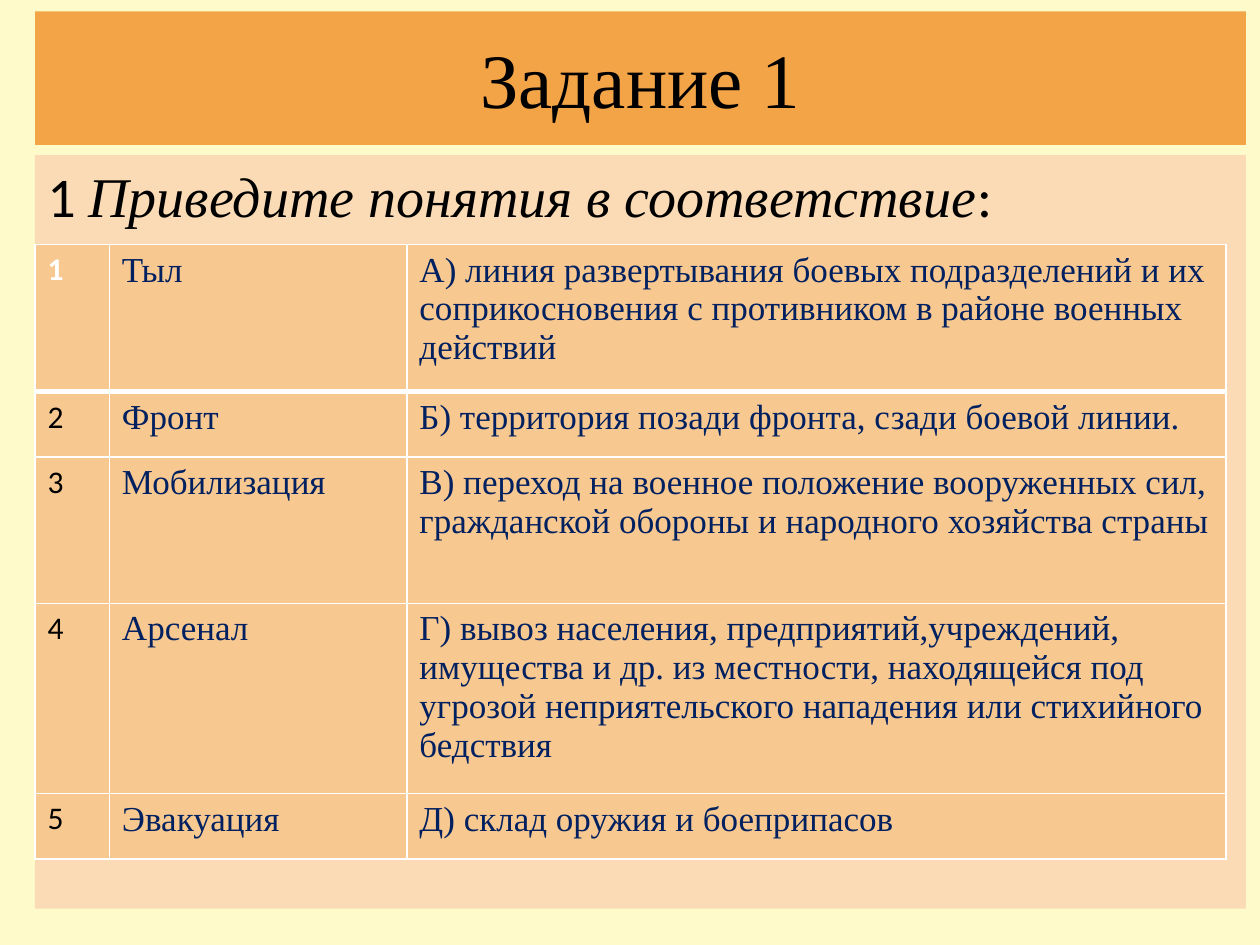
import pptx
import pptx.util
import pptx.dml.color
import pptx.enum.text
import pptx.oxml
import pptx.oxml.ns

Pt = pptx.util.Pt
RGB = pptx.dml.color.RGBColor
ALIGN = pptx.enum.text.PP_ALIGN
ANCHOR = pptx.enum.text.MSO_ANCHOR

CREAM = RGB(0xFE, 0xFA, 0xC9)
ORANGE = RGB(0xF3, 0xA4, 0x47)
PEACH = RGB(0xFA, 0xDB, 0xB5)
SAND = RGB(0xF8, 0xC8, 0x91)
NAVY = RGB(0x00, 0x20, 0x60)
BLACK = RGB(0, 0, 0)
WHITE = RGB(0xFF, 0xFF, 0xFF)
SERIF, SANS = "Times New Roman", "Calibri"

TITLE = "Задание 1"
TASK = [
    ("1 ", {"name": SANS}),
    ("Приведите понятия в соответствие", {"name": SERIF, "italic": True}),
    (":", {"name": SANS}),
]
TERMS = [
    ("Тыл", "А) линия развертывания боевых подразделений и их "
            "соприкосновения с противником в районе военных действий"),
    ("Фронт", "Б) территория позади фронта, сзади боевой линии."),
    ("Мобилизация", "В) переход на военное положение вооруженных сил, "
                    "гражданской обороны и народного хозяйства страны"),
    ("Арсенал", "Г) вывоз населения, предприятий,учреждений, имущества и др. "
                "из местности, находящейся под угрозой неприятельского "
                "нападения или стихийного бедствия"),
    ("Эвакуация", "Д) склад оружия и боеприпасов"),
]

LEFT, WIDTH = 20, 692
TITLE_BOX = (LEFT, 6.5, WIDTH, 76.3)
BODY_BOX = (LEFT, 88.6, WIDTH, 430.6)
TABLE_TOP = 139.7
COLS = [42.5, 170, 468]
ROWS = [84.2, 37.4, 83.5, 108.7, 37.4]

NUMBER = {"name": SANS, "size": Pt(18), "bold": False}
WORDS = {"name": SERIF, "size": Pt(20), "bold": False}


def style(font, color, form):
    for key, value in form.items():
        setattr(font, key, value)
    font.color.rgb = color


def write(par, text, color, form):
    run = par.add_run()
    run.text = text
    style(run.font, color, form)


def place(shape, box, fill):
    shape.left, shape.top, shape.width, shape.height = map(Pt, box)
    shape.fill.solid()
    shape.fill.fore_color.rgb = fill
    shape.text_frame.word_wrap = True


def edge(cell, side, width):
    """Draw one white border of a cell; side is L, R, T or B."""
    cell._tc.get_or_add_tcPr().append(pptx.oxml.parse_xml(
        f'<a:ln{side} {pptx.oxml.ns.nsdecls("a")} w="{Pt(width)}"><a:solidFill>'
        f'<a:srgbClr val="{WHITE}"/></a:solidFill></a:ln{side}>'))


def add_terms(slide):
    frame = slide.shapes.add_table(
        len(ROWS), len(COLS), Pt(LEFT), Pt(TABLE_TOP), Pt(sum(COLS)), Pt(sum(ROWS)))
    table = frame.table
    for col, width in zip(table.columns, COLS):
        col.width = Pt(width)
    for r, (term, text) in enumerate(TERMS):
        table.rows[r].height = Pt(ROWS[r])
        for c, words in enumerate((str(r + 1), term, text)):
            cell = table.cell(r, c)
            color, form = (NAVY, WORDS) if c else (BLACK, NUMBER)
            if r == c == 0:
                color, form = WHITE, {**NUMBER, "bold": True}
            write(cell.text_frame.paragraphs[0], words, color, form)
            for side, heavy in (("L", False), ("R", False),
                                ("T", r == 1), ("B", r == 0)):
                edge(cell, side, 3 if heavy else 1)
            cell.fill.solid()
            cell.fill.fore_color.rgb = SAND


def main():
    deck = pptx.Presentation()
    deck.slide_width, deck.slide_height = Pt(720), Pt(540)
    slide = deck.slides.add_slide(deck.slide_layouts[5])
    slide.background.fill.solid()
    slide.background.fill.fore_color.rgb = CREAM

    title = slide.shapes.title
    place(title, TITLE_BOX, ORANGE)
    title.text_frame.vertical_anchor = ANCHOR.MIDDLE
    par = title.text_frame.paragraphs[0]
    par.alignment = ALIGN.CENTER
    write(par, TITLE, BLACK, {"name": SERIF, "size": Pt(44)})

    body = slide.shapes.add_textbox(*map(Pt, BODY_BOX))
    place(body, BODY_BOX, PEACH)
    par = body.text_frame.paragraphs[0]
    par.space_before = Pt(6.4)
    for text, form in TASK:
        write(par, text, BLACK, {"size": Pt(32), **form})

    add_terms(slide)
    deck.save("out.pptx")


if __name__ == "__main__":
    main()
